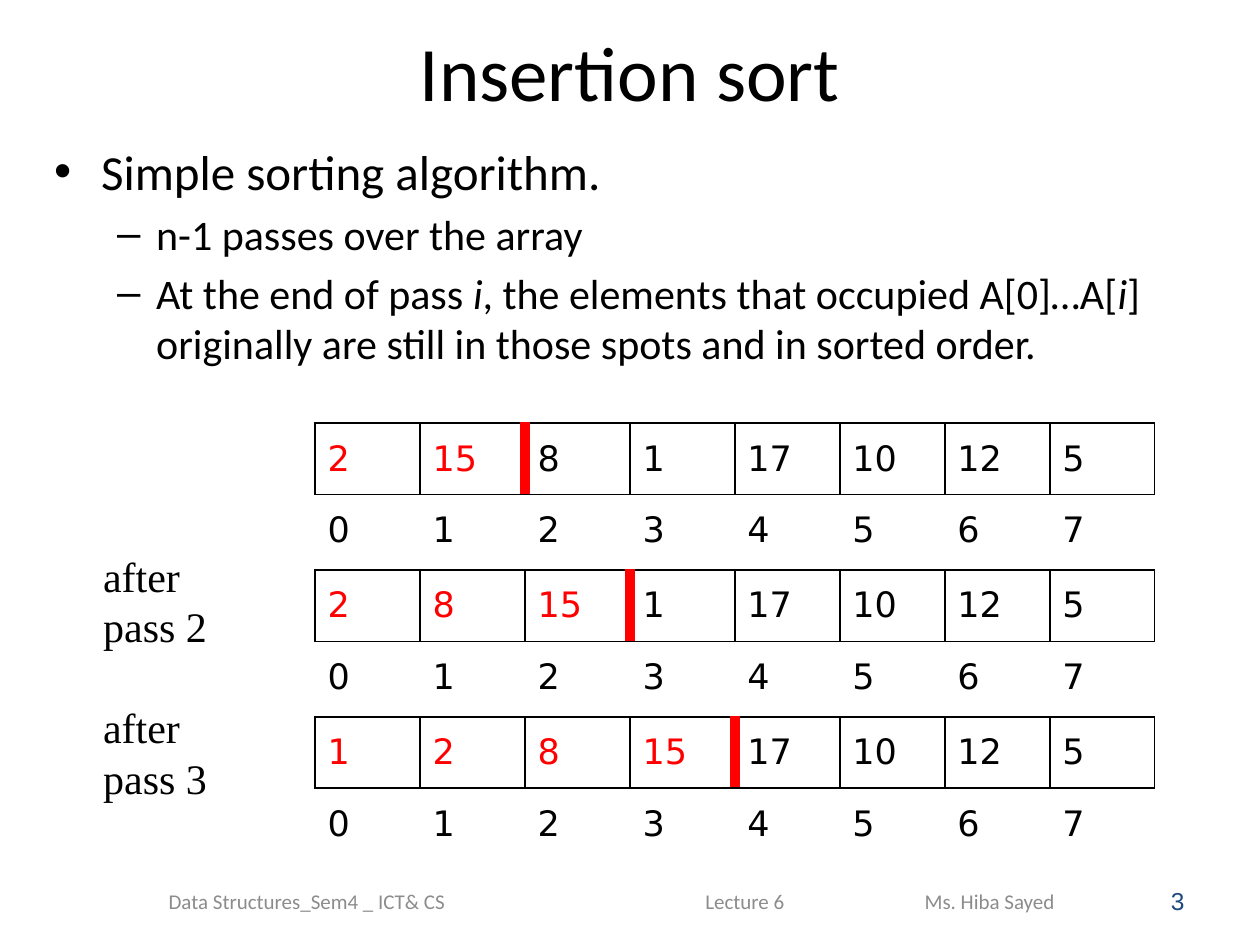
from lxml import etree
from pptx import Presentation
from pptx.dml.color import RGBColor
from pptx.enum.text import MSO_ANCHOR, PP_ALIGN
from pptx.oxml.ns import qn
from pptx.util import Cm, Pt

BLACK = RGBColor(0x00, 0x00, 0x00)
RED = RGBColor(0xFF, 0x00, 0x00)
GREY = RGBColor(0x8C, 0x8C, 0x8C)
NAVY = RGBColor(0x1F, 0x49, 0x7D)

NO_STYLE = "{2D5ABB26-0587-4C30-8999-92F81FD0307C}"
# (values, number of sorted values) for each pass
PASSES = [
    ([2, 15, 8, 1, 17, 10, 12, 5], 2),
    ([2, 8, 15, 1, 17, 10, 12, 5], 3),
    ([1, 2, 8, 15, 17, 10, 12, 5], 4),
]
TABLE_PITCH = 2.96
LABEL_PITCH = 3.05
# (level, size, bullet, left margin, hanging indent, [(text, italic)])
POINTS = [
    (0, 28, "•", 0.95, 0.95, [("Simple sorting algorithm.", False)]),
    (1, 24, "–", 2.06, 0.79, [("n-1 passes over the array", False)]),
    (1, 24, "–", 2.06, 0.79, [
        ("At the end of pass ", False), ("i", True),
        (", the elements that occupied A[0]…A[", False), ("i", True),
        ("] originally are still in those spots and in sorted order.", False)]),
]


def add_run(p, text, font, size, color, italic=None):
    r = p.add_run()
    r.text = text
    r.font.name = font
    r.font.size = Pt(size)
    r.font.color.rgb = color
    r.font.italic = italic


def add_text_box(s, x, y, w, h, anchor=MSO_ANCHOR.TOP, wrap=True):
    tf = s.shapes.add_textbox(Cm(x), Cm(y), Cm(w), Cm(h)).text_frame
    tf.word_wrap = wrap
    tf.vertical_anchor = anchor
    return tf


def set_title(s, x, y, w, h):
    title = s.shapes.title
    title.left, title.top, title.width, title.height = Cm(x), Cm(y), Cm(w), Cm(h)
    tf = title.text_frame
    tf.vertical_anchor = MSO_ANCHOR.MIDDLE
    p = tf.paragraphs[0]
    p.alignment = PP_ALIGN.CENTER
    add_run(p, "Insertion sort", "Calibri", 44, BLACK)


def add_points(s, x, y, w, h):
    tf = add_text_box(s, x, y, w, h)
    for i, (level, size, bullet, margin, hanging, parts) in enumerate(POINTS):
        p = tf.paragraphs[0] if i == 0 else tf.add_paragraph()
        p.level = level
        p.space_before = Pt(0.2 * size)
        pPr = p._p.get_or_add_pPr()
        pPr.set("marL", str(Cm(margin)))
        pPr.set("indent", str(-Cm(hanging)))
        etree.SubElement(pPr, qn("a:buFont"), typeface="Arial")
        etree.SubElement(pPr, qn("a:buChar"), char=bullet)
        for text, italic in parts:
            add_run(p, text, "Calibri", size, BLACK, italic)


def set_border(cell, side, color, width):
    """Draw one side (L, R, T or B) of a cell; call before setting its fill."""
    tcPr = cell._tc.get_or_add_tcPr()
    ln = etree.SubElement(tcPr, qn(f"a:ln{side}"), w=str(Pt(width)))
    fill = etree.SubElement(ln, qn("a:solidFill"))
    etree.SubElement(fill, qn("a:srgbClr"), val=str(color))


def fill_cell(cell, value, color):
    cell.fill.background()
    cell.vertical_anchor = MSO_ANCHOR.MIDDLE
    p = cell.text_frame.paragraphs[0]
    p.space_before = Pt(4)
    add_run(p, str(value), "DejaVu Sans", 20, color)


def add_array(s, x, y, w, h, values, n_sorted):
    """Array values over their indices, with a red bar after the sorted part."""
    n = len(values)
    table = s.shapes.add_table(2, n, Cm(x), Cm(y), Cm(w), Cm(h)).table
    table.first_row = table.horz_banding = False
    table._tbl.tblPr.find(qn("a:tableStyleId")).text = NO_STYLE
    for row in table.rows:
        row.height = Cm(h / 2)
    for i, value in enumerate(values):
        table.columns[i].width = Cm(w / n)
        cell = table.cell(0, i)
        for side, edge in (("L", i), ("R", i + 1), ("T", None), ("B", None)):
            bar = edge == n_sorted
            set_border(cell, side, RED if bar else BLACK, 6 if bar else 1)
        fill_cell(cell, value, RED if i < n_sorted else BLACK)
        fill_cell(table.cell(1, i), i, BLACK)


def add_pass_label(s, x, y, w, h, number):
    tf = add_text_box(s, x, y, w, h, wrap=False)
    add_run(tf.paragraphs[0], "after", "Times New Roman", 24, BLACK)
    add_run(tf.add_paragraph(), f"pass {number}", "Times New Roman", 24, BLACK)


def add_footer(s, x, y, w, h):
    tf = add_text_box(s, x, y, w, h, MSO_ANCHOR.MIDDLE)
    tf.margin_left = Cm(1.93)
    p = tf.paragraphs[0]
    tabs = etree.SubElement(p._p.get_or_add_pPr(), qn("a:tabLst"))
    for pos in (10.82, 15.24):
        etree.SubElement(tabs, qn("a:tab"), pos=str(Cm(pos)), algn="l")
    add_run(p, "Data Structures_Sem4 _ ICT& CS\tLecture 6\tMs. Hiba Sayed",
            "Calibri", 12, GREY)


def add_slide_number(s, x, y, w, h):
    p = add_text_box(s, x, y, w, h, MSO_ANCHOR.MIDDLE).paragraphs[0]
    p.alignment = PP_ALIGN.RIGHT
    add_run(p, "3", "Arial", 14, NAVY)


def main():
    prs = Presentation()
    prs.slide_width, prs.slide_height = Cm(25.4), Cm(19.05)
    s = prs.slides.add_slide(prs.slide_layouts[5])
    set_title(s, 1.27, 0.15, 22.86, 2.54)
    add_points(s, 0.84, 2.72, 22.86, 14.94)
    for i, (values, n_sorted) in enumerate(PASSES):
        add_array(s, 6.35, 8.53 + i * TABLE_PITCH, 16.93, 2.88, values, n_sorted)
    for i, number in enumerate((2, 3)):
        add_pass_label(s, 1.83, 10.97 + i * LABEL_PITCH, 2.62, 2.29, number)
    add_footer(s, 1.47, 17.65, 21.8, 1.02)
    add_slide_number(s, 18.21, 17.65, 5.92, 1.02)
    prs.save("out.pptx")


if __name__ == "__main__":
    main()
